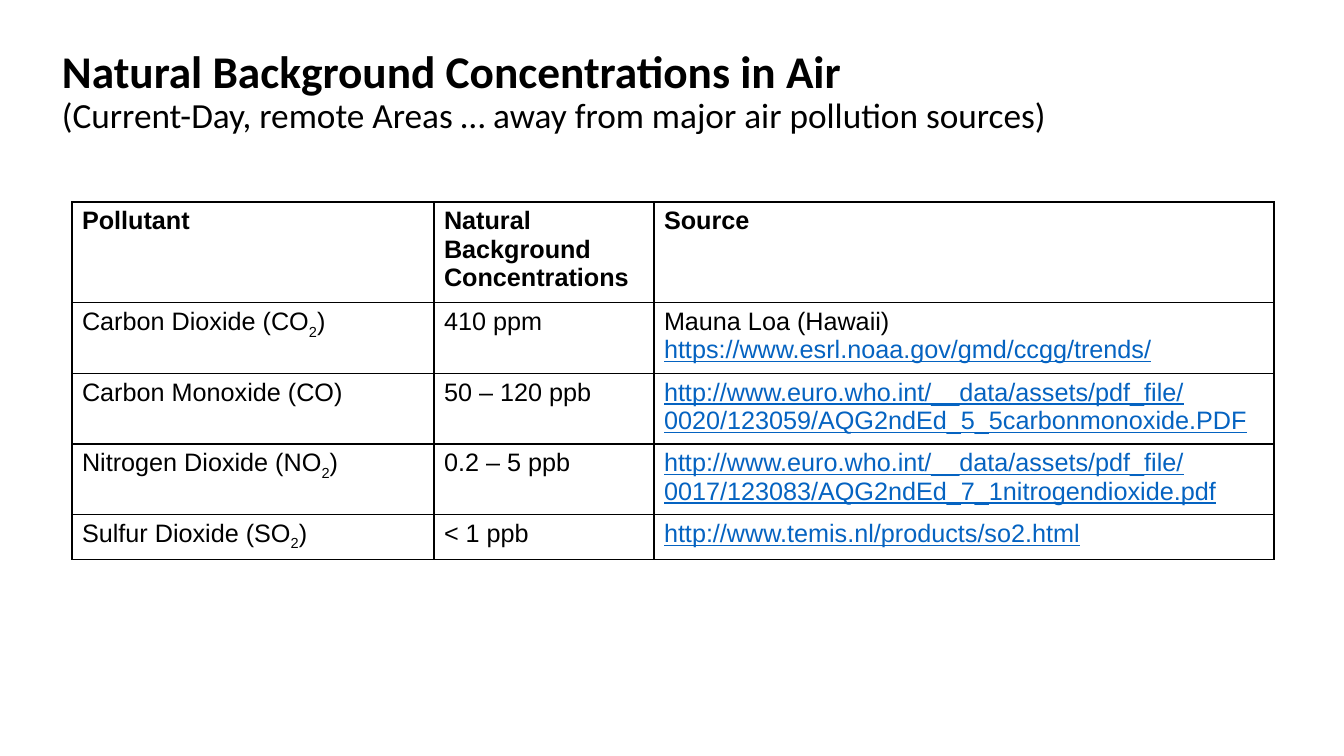
from lxml import etree
from pptx import Presentation
from pptx.dml.color import RGBColor
from pptx.enum.text import MSO_ANCHOR
from pptx.oxml.ns import qn
from pptx.util import Emu, Pt

MIDDLE = MSO_ANCHOR.MIDDLE
EMU_PER_PX = 914400 / 100.8
COLORS = {"text": "000000", "link": "0563C1", "border": "000000"}

HEADLINE = "Natural Background Concentrations in Air"
SUBTITLE = "(Current-Day, remote Areas … away from major air pollution sources)"
HEADERS = ("Pollutant", "Natural Background Concentrations", "Source")
# pollutant name, subscript, closing text; concentration; source lines
POLLUTANTS = [
    (("Carbon Dioxide (CO", "2", ")"), "410 ppm",
     ("Mauna Loa (Hawaii)", "https://www.esrl.noaa.gov/gmd/ccgg/trends/")),
    (("Carbon Monoxide (CO)",), "50 – 120 ppb",
     ("http://www.euro.who.int/__data/assets/pdf_file/0020/123059/AQG2ndEd_5_5carbonmonoxide.PDF",)),
    (("Nitrogen Dioxide (NO", "2", ")"), "0.2 – 5 ppb",
     ("http://www.euro.who.int/__data/assets/pdf_file/0017/123083/AQG2ndEd_7_1nitrogendioxide.pdf",)),
    (("Sulfur Dioxide (SO", "2", ")"), "< 1 ppb",
     ("http://www.temis.nl/products/so2.html",)),
]

SLIDE_SIZE = (1344, 756)
TITLE_BOX = (52, 42, 1159, 101)
TABLE_LEFT, TABLE_TOP = 72, 202
COLUMN_WIDTHS = (362, 220, 620)
ROW_HEIGHTS = (94, 67, 67, 66, 43)

TITLE_FORMAT = {"name": "Calibri", "size": Pt(32.4), "bold": True}
SUBTITLE_FORMAT = {"name": "Calibri", "size": Pt(25.2), "bold": False}
HEADER_FORMAT = {"name": "Arial", "size": Pt(18), "bold": True}
BODY_FORMAT = {**HEADER_FORMAT, "bold": False}
LINK_FORMAT = {**BODY_FORMAT, "underline": True}


def px(length):
    return Emu(round(length * EMU_PER_PX))


def add_run(paragraph, text, font_format, color="text"):
    run = paragraph.add_run()
    run.text = text
    for attribute, value in font_format.items():
        setattr(run.font, attribute, value)
    run.font.color.rgb = RGBColor.from_string(COLORS[color])
    return run


def add_borders(cell):
    properties = cell._tc.get_or_add_tcPr()
    for position, side in enumerate(("lnL", "lnR", "lnT", "lnB")):
        line = etree.Element(qn(f"a:{side}"), w=str(Pt(1)))
        fill = etree.SubElement(line, qn("a:solidFill"))
        etree.SubElement(fill, qn("a:srgbClr"), val=COLORS["border"])
        properties.insert(position, line)


def fill_pollutant_row(cells, name_parts, concentration, source_lines):
    name, amount, source = (cell.text_frame for cell in cells)
    for index, part in enumerate(name_parts):
        run = add_run(name.paragraphs[0], part, BODY_FORMAT)
        if index == 1:
            run._r.get_or_add_rPr().set("baseline", "-25000")
    add_run(amount.paragraphs[0], concentration, BODY_FORMAT)
    for index, line in enumerate(source_lines):
        paragraph = source.add_paragraph() if index else source.paragraphs[0]
        if line.startswith("http"):
            add_run(paragraph, line, LINK_FORMAT, "link")
        else:
            add_run(paragraph, line, BODY_FORMAT)


def add_title(slide):
    frame = slide.shapes.add_textbox(*map(px, TITLE_BOX)).text_frame
    frame.word_wrap = True
    frame.vertical_anchor = MIDDLE
    paragraph = frame.paragraphs[0]
    paragraph.line_spacing = 0.9
    add_run(paragraph, HEADLINE, TITLE_FORMAT)
    paragraph.add_line_break()
    add_run(paragraph, SUBTITLE, SUBTITLE_FORMAT)


def add_pollutant_table(slide):
    bounds = (TABLE_LEFT, TABLE_TOP, sum(COLUMN_WIDTHS), sum(ROW_HEIGHTS))
    table = slide.shapes.add_table(
        len(ROW_HEIGHTS), len(COLUMN_WIDTHS), *map(px, bounds)).table
    table.first_row = table.horz_banding = False
    for column, width in zip(table.columns, COLUMN_WIDTHS):
        column.width = px(width)
    for row, height in zip(table.rows, ROW_HEIGHTS):
        row.height = px(height)
    for cell in table.iter_cells():
        cell.fill.background()
        add_borders(cell)

    header_row, *pollutant_rows = table.rows
    for cell, header in zip(header_row.cells, HEADERS):
        add_run(cell.text_frame.paragraphs[0], header, HEADER_FORMAT)
    for row, pollutant in zip(pollutant_rows, POLLUTANTS):
        fill_pollutant_row(row.cells, *pollutant)


def main():
    presentation = Presentation()
    presentation.slide_width, presentation.slide_height = map(px, SLIDE_SIZE)
    slide = presentation.slides.add_slide(presentation.slide_layouts[6])
    add_title(slide)
    add_pollutant_table(slide)
    presentation.save("out.pptx")


if __name__ == "__main__":
    main()
